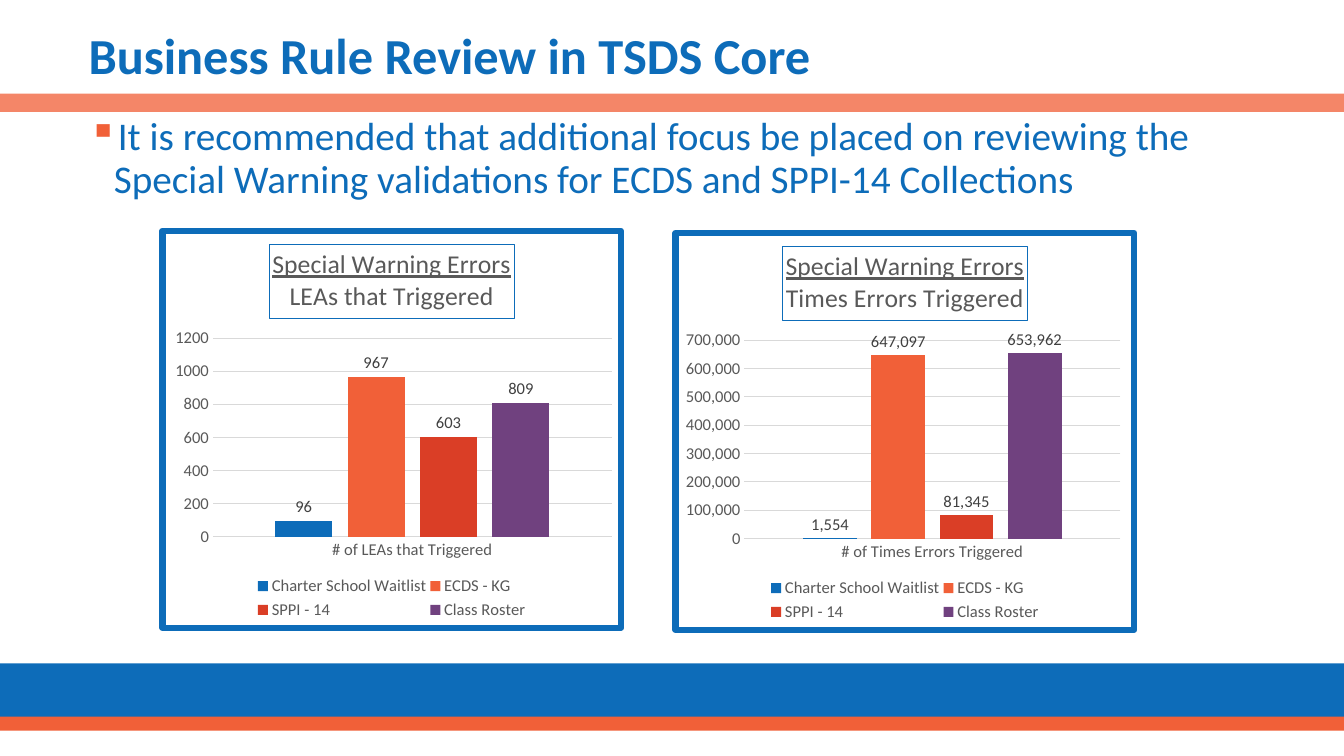
from dataclasses import dataclass

from lxml import etree
from pptx import Presentation
from pptx.chart.data import CategoryChartData
from pptx.dml.color import RGBColor
from pptx.enum.chart import XL_CHART_TYPE, XL_LABEL_POSITION, XL_LEGEND_POSITION, XL_TICK_MARK
from pptx.enum.shapes import MSO_SHAPE
from pptx.enum.text import MSO_ANCHOR
from pptx.oxml import parse_xml
from pptx.oxml.ns import nsdecls, qn
from pptx.util import Inches, Pt

CLUSTERED = XL_CHART_TYPE.COLUMN_CLUSTERED
OUTSIDE_END = XL_LABEL_POSITION.OUTSIDE_END
LEGEND_BOTTOM = XL_LEGEND_POSITION.BOTTOM
NO_TICK = XL_TICK_MARK.NONE
RECTANGLE = MSO_SHAPE.RECTANGLE
MIDDLE = MSO_ANCHOR.MIDDLE
TOP = MSO_ANCHOR.TOP

BLUE = RGBColor(0x0D, 0x6C, 0xB9)
ORANGE = RGBColor(0xF1, 0x60, 0x38)
SALMON = RGBColor(0xF4, 0x86, 0x68)
RED = RGBColor(0xDA, 0x3E, 0x26)
PURPLE = RGBColor(0x70, 0x41, 0x7F)
GRAY = RGBColor(0x59, 0x59, 0x59)
DARK_GRAY = RGBColor(0x40, 0x40, 0x40)
GRID_GRAY = RGBColor(0xD9, 0xD9, 0xD9)
FONT = "Calibri"
COLLECTIONS = {
    "Charter School Waitlist": BLUE,
    "ECDS - KG": ORANGE,
    "SPPI - 14": RED,
    "Class Roster": PURPLE,
}


@dataclass(frozen=True)
class Band:
    top: float
    height: float
    color: RGBColor


@dataclass(frozen=True)
class WarningChart:
    left: float
    top: float
    subtitle: str
    category: str
    counts: tuple[int, ...]
    number_format: str
    maximum: int
    step: int
    plot_left: float
    plot_width: float


BANDS = [
    Band(6.58, 0.58, BLUE),
    Band(7.11, 0.14, ORANGE),
    Band(0.93, 0.18, SALMON),
]
CHARTS = [
    WarningChart(1.58, 2.26, "LEAs that Triggered", "# of LEAs that Triggered",
                 (96, 967, 603, 809), "General", 1200, 200, 0.11, 0.87),
    WarningChart(6.67, 2.28, "Times Errors Triggered", "# of Times Errors Triggered",
                 (1554, 647097, 81345, 653962), "#,##0", 700000, 100000, 0.15, 0.82),
]


def style_font(font, size: float, color: RGBColor, bold: bool = False) -> None:
    font.name = FONT
    font.size = Pt(size)
    font.bold = bold
    font.color.rgb = color


def add_band(slide, band: Band) -> None:
    stripe = slide.shapes.add_shape(
        RECTANGLE, 0, Inches(band.top), Inches(13.33), Inches(band.height))
    stripe.shadow.inherit = False
    stripe.fill.solid()
    stripe.fill.fore_color.rgb = band.color
    stripe.line.fill.background()


def add_text(slide, box: tuple[float, ...], text: str, size: float,
             bold: bool, anchor, bullet: bool) -> None:
    frame = slide.shapes.add_textbox(*map(Inches, box)).text_frame
    frame.word_wrap = True
    frame.vertical_anchor = anchor
    frame.text = text
    paragraph = frame.paragraphs[0]
    paragraph.line_spacing = 0.9
    if bullet:
        properties = paragraph._p.get_or_add_pPr()
        properties.set("marL", str(Inches(0.25)))
        properties.set("indent", str(-Inches(0.25)))
        color = etree.SubElement(properties, qn("a:buClr"))
        etree.SubElement(color, qn("a:srgbClr"), val=str(ORANGE))
        etree.SubElement(properties, qn("a:buChar"), char="▪")
    style_font(paragraph.runs[0].font, size, BLUE, bold)


def set_layout(parent, index: int, bounds: tuple[float, ...], inner: bool) -> None:
    for existing in parent.findall(qn("c:layout")):
        parent.remove(existing)
    layout = etree.Element(qn("c:layout"))
    manual = etree.SubElement(layout, qn("c:manualLayout"))
    if inner:
        etree.SubElement(manual, qn("c:layoutTarget"), val="inner")
    for mode in ("xMode", "yMode"):
        etree.SubElement(manual, qn(f"c:{mode}"), val="edge")
    for side, value in zip("xywh", bounds):
        etree.SubElement(manual, qn(f"c:{side}"), val=str(value))
    parent.insert(index, layout)


def add_border(chart) -> None:
    border = parse_xml(
        f'<c:spPr {nsdecls("c", "a")}><a:solidFill><a:srgbClr val="FFFFFF"/></a:solidFill>'
        f'<a:ln w="{Pt(4.5)}"><a:solidFill><a:srgbClr val="{BLUE}"/></a:solidFill>'
        '<a:round/></a:ln></c:spPr>')
    chart._chartSpace.find(qn("c:chart")).addnext(border)


def add_title(chart, subtitle: str) -> None:
    title = chart.chart_title
    title.include_in_layout = False
    title.format.line.color.rgb = BLUE
    title.format.line.width = Pt(0.75)
    title.text_frame.text = f"Special Warning Errors\n{subtitle}"
    for paragraph, underlined in zip(title.text_frame.paragraphs, (True, False)):
        style_font(paragraph.runs[0].font, 18.6, GRAY)
        paragraph.runs[0].font.underline = underlined


def style_axes(chart, details: WarningChart) -> None:
    for axis in (chart.category_axis, chart.value_axis):
        axis.major_tick_mark = NO_TICK
        axis.minor_tick_mark = NO_TICK
        style_font(axis.tick_labels.font, 12, GRAY)
    category_line = chart.category_axis.format.line
    grid_line = chart.value_axis.major_gridlines.format.line
    for line in (category_line, grid_line):
        line.color.rgb = GRID_GRAY
        line.width = Pt(0.75)
    counts = chart.value_axis
    counts.format.line.fill.background()
    counts.minimum_scale = 0
    counts.maximum_scale = details.maximum
    counts.major_unit = details.step
    counts.tick_labels.number_format = details.number_format
    counts.tick_labels.number_format_is_linked = False


def add_warning_chart(slide, details: WarningChart) -> None:
    data = CategoryChartData(number_format=details.number_format)
    data.categories = [details.category]
    for name, count in zip(COLLECTIONS, details.counts):
        data.add_series(name, [count])
    chart = slide.shapes.add_chart(
        CLUSTERED, Inches(details.left), Inches(details.top),
        Inches(4.61), Inches(4), data).chart
    style_font(chart.font, 10, RGBColor(0, 0, 0))
    add_border(chart)
    add_title(chart, details.subtitle)
    style_axes(chart, details)
    plot = chart.plots[0]
    plot.gap_width = 219
    plot.overlap = -27
    plot.vary_by_categories = False
    for series, color in zip(plot.series, COLLECTIONS.values()):
        series.format.fill.solid()
        series.format.fill.fore_color.rgb = color
        labels = series.data_labels
        labels.show_value = True
        labels.position = OUTSIDE_END
        labels.number_format = details.number_format
        labels.number_format_is_linked = False
        style_font(labels.font, 12, DARK_GRAY)
    chart.has_legend = True
    chart.legend.position = LEGEND_BOTTOM
    chart.legend.include_in_layout = False
    style_font(chart.legend.font, 12, GRAY)
    set_layout(chart.legend._element, 1, (0.2, 0.86, 0.6, 0.13), False)
    set_layout(chart._chartSpace.chart.plotArea, 0,
               (details.plot_left, 0.27, details.plot_width, 0.5), True)


def main() -> None:
    presentation = Presentation()
    presentation.slide_width = Inches(13.33)
    presentation.slide_height = Inches(7.5)
    slide = presentation.slides.add_slide(presentation.slide_layouts[6])
    for band in BANDS:
        add_band(slide, band)
    add_text(slide, (0.78, 0.17, 12.16, 0.82), "Business Rule Review in TSDS Core",
             36, True, MIDDLE, False)
    add_text(slide, (0.78, 1.11, 11.28, 1.72),
             "It is recommended that additional focus be placed on reviewing the "
             "Special Warning validations for ECDS and SPPI-14 Collections",
             28, False, TOP, True)
    for details in CHARTS:
        add_warning_chart(slide, details)
    presentation.save("out.pptx")


if __name__ == "__main__":
    main()
